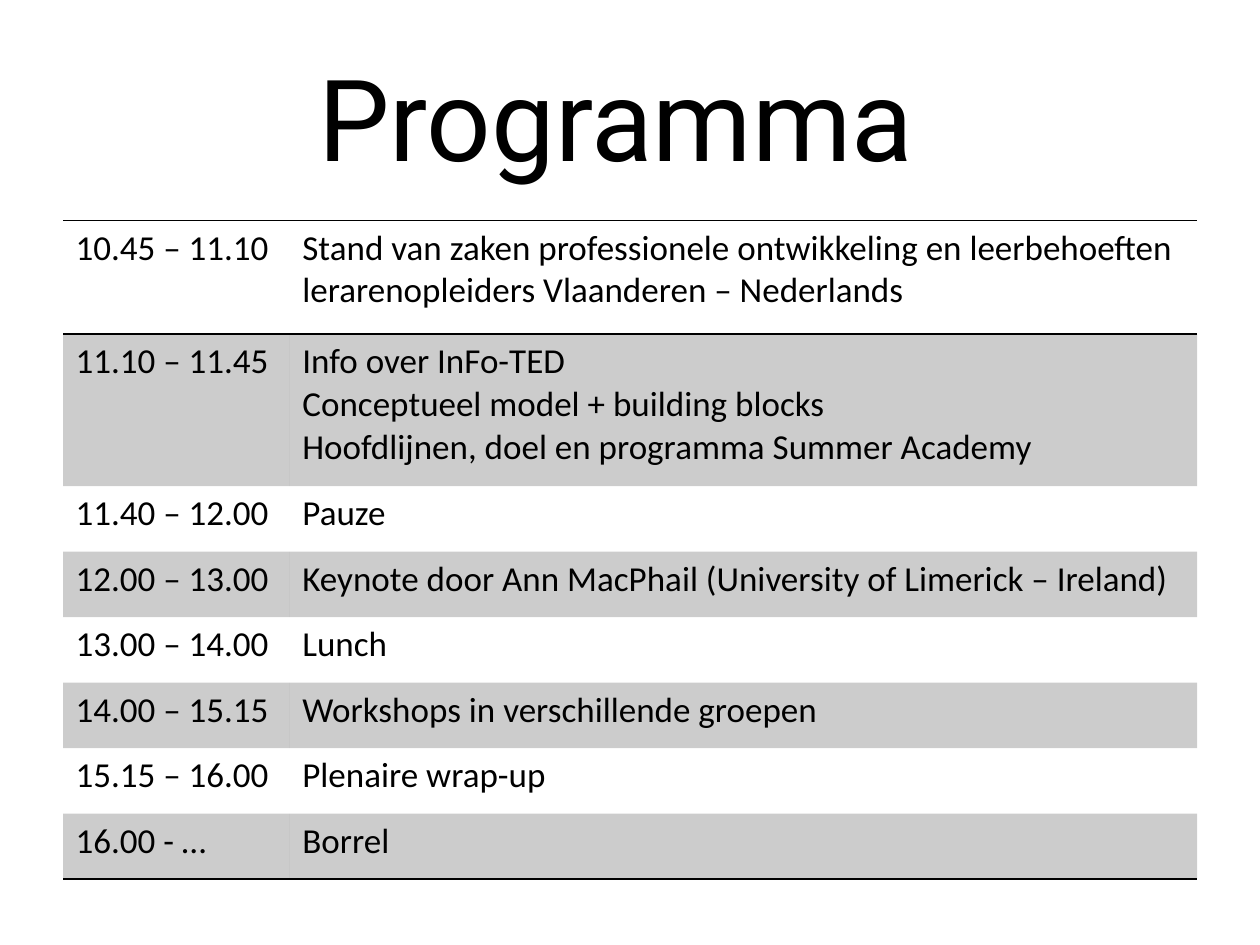
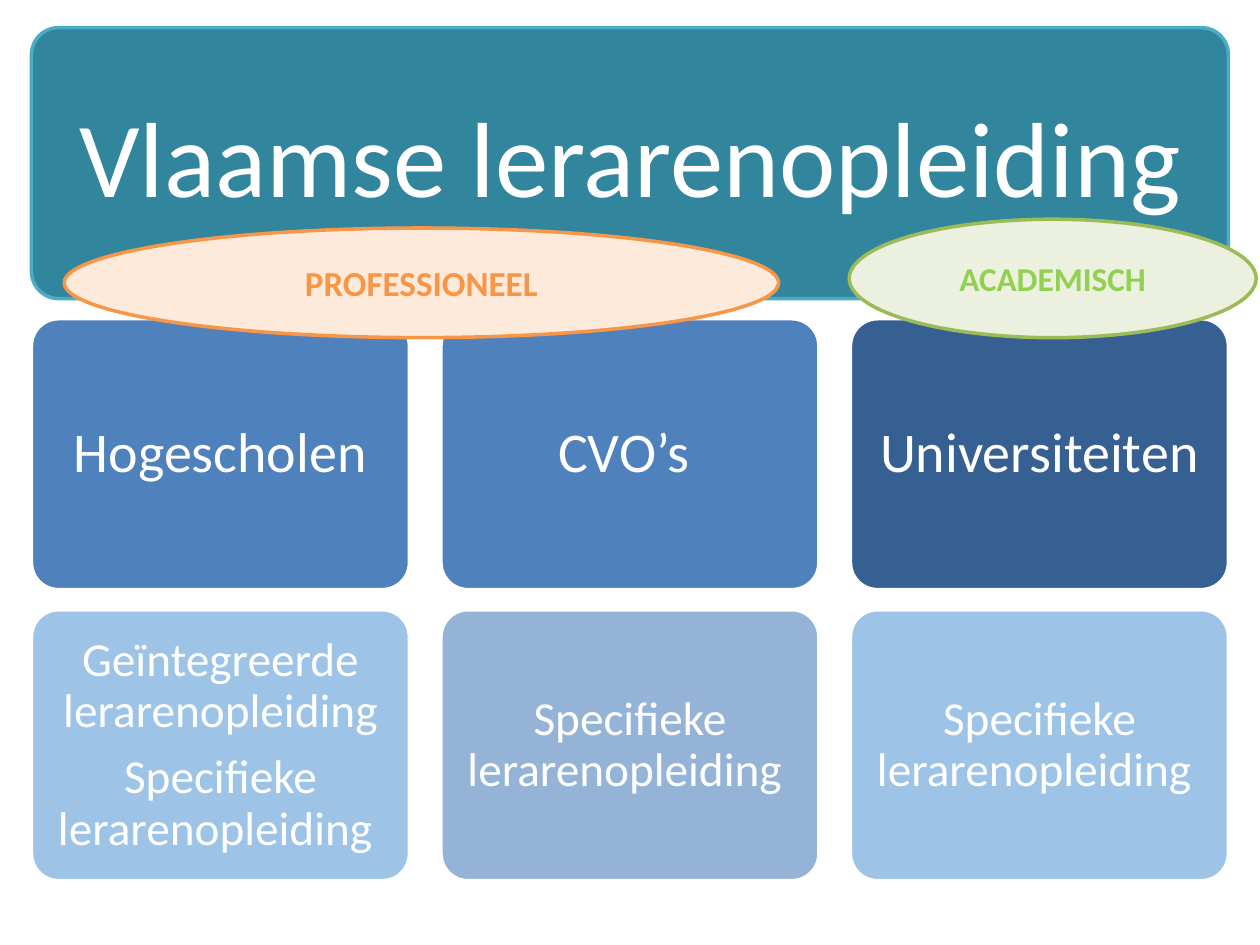
from dataclasses import dataclass
from typing import NamedTuple

from lxml.etree import SubElement
from pptx import Presentation
from pptx.dml.color import RGBColor
from pptx.enum.shapes import MSO_SHAPE as Preset
from pptx.enum.text import MSO_ANCHOR as Anchor, MSO_AUTO_SIZE as AutoSize, PP_ALIGN as Align
from pptx.oxml import parse_xml
from pptx.oxml.ns import nsdecls, qn
from pptx.util import Inches, Pt

WIDTH, HEIGHT = Inches(10), Inches(7.5)
TITLE_ONLY = 5
NO_STYLE_NO_GRID = "{2D5ABB26-0587-4C30-8999-92F81FD0307C}"


@dataclass(frozen=True)
class Theme:
    font: str = "Calibri"
    title_font: str = "Roboto"
    black: str = "000000"
    white: str = "FFFFFF"
    banner: str = "31859C"
    banner_line: str = "4BACC6"
    blue: str = "4F81BD"
    dark_blue: str = "376092"
    light_blue: str = "9DC3E6"
    grey_blue: str = "95B3D7"
    orange: str = "F79646"
    pale_orange: str = "FDEADA"
    green: str = "9BBB59"
    bright_green: str = "92D050"
    pale_green: str = "EBF1DE"
    band_opacity: int = 20
    title_size: float = 64.8
    banner_size: float = 61
    school_size: float = 32
    course_size: float = 27
    table_size: float = 20
    wide_label_size: float = 20
    narrow_label_size: float = 19
    outline: float = 2
    rule: float = 1


T = Theme()


class Area(NamedTuple):
    """Left, top, width and height as percentages of the slide."""
    x: float
    y: float
    w: float
    h: float

    def emu(self) -> tuple[int, int, int, int]:
        return (int(WIDTH * self.x / 100), int(HEIGHT * self.y / 100),
                int(WIDTH * self.w / 100), int(HEIGHT * self.h / 100))


class Grid(NamedTuple):
    """Equal cells, measured in percentages of the slide."""
    left: float = 2.5
    top: float = 2.93
    col: float = 30
    row: float = 28.67
    col_gap: float = 2.5
    row_gap: float = 2.13

    def area(self, col: int, row: int, span: int = 1) -> Area:
        return Area(self.left + col * (self.col + self.col_gap),
                    self.top + row * (self.row + self.row_gap),
                    span * self.col + (span - 1) * self.col_gap, self.row)


class TextStyle(NamedTuple):
    size: float
    color: str = T.white
    font: str = T.font
    bold: bool = False
    line: float = 1
    after: float = 0


class Slot(NamedTuple):
    time: str
    items: list[str]
    height: float  # percentage of the slide


class Column(NamedTuple):
    school: str
    school_fill: str
    courses: list[str]
    course_fill: str


class Label(NamedTuple):
    text: str
    area: Area
    fill: str
    line: str
    style: TextStyle


SINGLE_ROW = 6.93
SLOTS = [
    Slot("10.45 – 11.10", ["Stand van zaken professionele ontwikkeling en leerbehoeften "
                           "lerarenopleiders Vlaanderen – Nederlands"], 12),
    Slot("11.10 – 11.45", ["Info over InFo-TED", "Conceptueel model + building blocks",
                           "Hoofdlijnen, doel en programma Summer Academy"], 16.13),
    Slot("11.40 – 12.00", ["Pauze"], SINGLE_ROW),
    Slot("12.00 – 13.00", ["Keynote door Ann MacPhail (University of Limerick – Ireland)"],
         SINGLE_ROW),
    Slot("13.00 – 14.00", ["Lunch"], SINGLE_ROW),
    Slot("14.00 – 15.15", ["Workshops in verschillende groepen"], SINGLE_ROW),
    Slot("15.15 – 16.00", ["Plenaire wrap-up"], SINGLE_ROW),
    Slot("16.00 - …", ["Borrel"], SINGLE_ROW),
]

SPECIFIC = "Specifieke lerarenopleiding "
COLUMNS = [
    Column("Hogescholen", T.blue, ["Geïntegreerde lerarenopleiding", SPECIFIC], T.light_blue),
    Column("CVO’s ", T.blue, [SPECIFIC], T.grey_blue),
    Column("Universiteiten", T.dark_blue, [SPECIFIC], T.light_blue),
]
LABELS = [
    Label("PROFESSIONEEL", Area(5.1, 24.13, 56.7, 11.6), T.pale_orange, T.orange,
          TextStyle(T.wide_label_size, T.orange, bold=True)),
    Label("ACADEMISCH", Area(67.4, 23.2, 32.3, 12.53), T.pale_green, T.green,
          TextStyle(T.narrow_label_size, T.bright_green, bold=True)),
]


def write(tf, lines: list[str], style: TextStyle, align: Align = Align.CENTER) -> None:
    for i, line in enumerate(lines):
        p = tf.add_paragraph() if i else tf.paragraphs[0]
        p.text = line
        p.alignment = align
        p.line_spacing = style.line
        p.space_before, p.space_after = Pt(0), Pt(style.after)
        p.font.size, p.font.name, p.font.bold = Pt(style.size), style.font, style.bold
        p.font.color.rgb = RGBColor.from_string(style.color)


def set_frame(tf, inset_x: float, inset_y: float) -> None:
    tf.word_wrap = True
    tf.auto_size = AutoSize.NONE
    tf.vertical_anchor = Anchor.MIDDLE
    tf.margin_left = tf.margin_right = Inches(inset_x)
    tf.margin_top = tf.margin_bottom = Inches(inset_y)


def place_title(s, text: str, area: Area, style: TextStyle):
    title = s.shapes.title
    title.left, title.top, title.width, title.height = area.emu()
    set_frame(title.text_frame, 0.1, 0.05)
    write(title.text_frame, [text], style)
    return title


def add_box(s, preset: Preset, area: Area, fill: str, line: str):
    sp = s.shapes.add_shape(preset, *area.emu())
    sp.shadow.inherit = False
    sp.fill.solid()
    sp.fill.fore_color.rgb = RGBColor.from_string(fill)
    sp.line.color.rgb = RGBColor.from_string(line)
    sp.line.width = Pt(T.outline)
    if preset == Preset.ROUNDED_RECTANGLE:
        sp.adjustments[0] = 0.1
    return sp


def add_card(s, area: Area, fill: str, lines: list[str], size: float, inset: float) -> None:
    sp = add_box(s, Preset.ROUNDED_RECTANGLE, area, fill, T.white)
    set_frame(sp.text_frame, inset, inset)
    write(sp.text_frame, lines, TextStyle(size, line=0.9, after=round(size * 0.35)))


def shade(cell) -> None:
    """Fill a cell with translucent black."""
    cell.fill.solid()
    cell.fill.fore_color.rgb = RGBColor.from_string(T.black)
    color = next(cell._tc.tcPr.iter(qn("a:srgbClr")))
    SubElement(color, qn("a:alpha"), val=str(T.band_opacity * 1000))


def rule(cell, sides: list[str]) -> None:
    """Draw lines on the given sides; they come before the fill in the XML."""
    for i, side in enumerate(sides):
        cell._tc.get_or_add_tcPr().insert(i, parse_xml(
            f'<a:ln{side} {nsdecls("a")} w="{Pt(T.rule)}"><a:solidFill>'
            f'<a:srgbClr val="{T.black}"/></a:solidFill></a:ln{side}>'))


def add_programme(s, slots: list[Slot], area: Area, shares: tuple[float, ...]) -> None:
    left, top, width, height = area.emu()
    table = s.shapes.add_table(len(slots), len(shares), left, top, width, height).table
    table.first_row = table.horz_banding = False
    table._tbl.tblPr.find(qn("a:tableStyleId")).text = NO_STYLE_NO_GRID
    for column, share in zip(table.columns, shares):
        column.width = int(width * share)
    last = len(slots) - 1
    for i, slot in enumerate(slots):
        table.rows[i].height = int(HEIGHT * slot.height / 100)
        sides = {0: ["T", "B"], last: ["B"]}.get(i, [])
        for cell, lines in zip(table.rows[i].cells, ([slot.time], slot.items)):
            write(cell.text_frame, lines, TextStyle(T.table_size, T.black), Align.LEFT)
            if i % 2:
                shade(cell)
            else:
                cell.fill.background()
            rule(cell, sides)


def build_programme(prs) -> None:
    s = prs.slides.add_slide(prs.slide_layouts[TITLE_ONLY])
    place_title(s, "Programma ", Area(5, 4, 90, 16.67),
                TextStyle(T.title_size, T.black, T.title_font))
    add_programme(s, SLOTS, Area(5, 23.33, 90, sum(slot.height for slot in SLOTS)), (0.2, 0.8))


def build_teacher_training(prs) -> None:
    s = prs.slides.add_slide(prs.slide_layouts[TITLE_ONLY])
    grid = Grid()
    header = grid.area(0, 0, span=len(COLUMNS))
    title = place_title(s, "Vlaamse lerarenopleiding", header,
                        TextStyle(T.banner_size, line=0.9))
    banner = add_box(s, Preset.ROUNDED_RECTANGLE, header, T.banner, T.banner_line)
    title.element.addprevious(banner.element)
    for i, column in enumerate(COLUMNS):
        add_card(s, grid.area(i, 1), column.school_fill, [column.school], T.school_size, 0.13)
        add_card(s, grid.area(i, 2), column.course_fill, column.courses, T.course_size, 0.11)
    for label in LABELS:
        sp = add_box(s, Preset.OVAL, label.area, label.fill, label.line)
        set_frame(sp.text_frame, 0.1, 0.05)
        write(sp.text_frame, [label.text], label.style)


def main() -> None:
    prs = Presentation()
    prs.slide_width, prs.slide_height = WIDTH, HEIGHT
    build_programme(prs)
    build_teacher_training(prs)
    prs.save("out.pptx")


if __name__ == "__main__":
    main()
